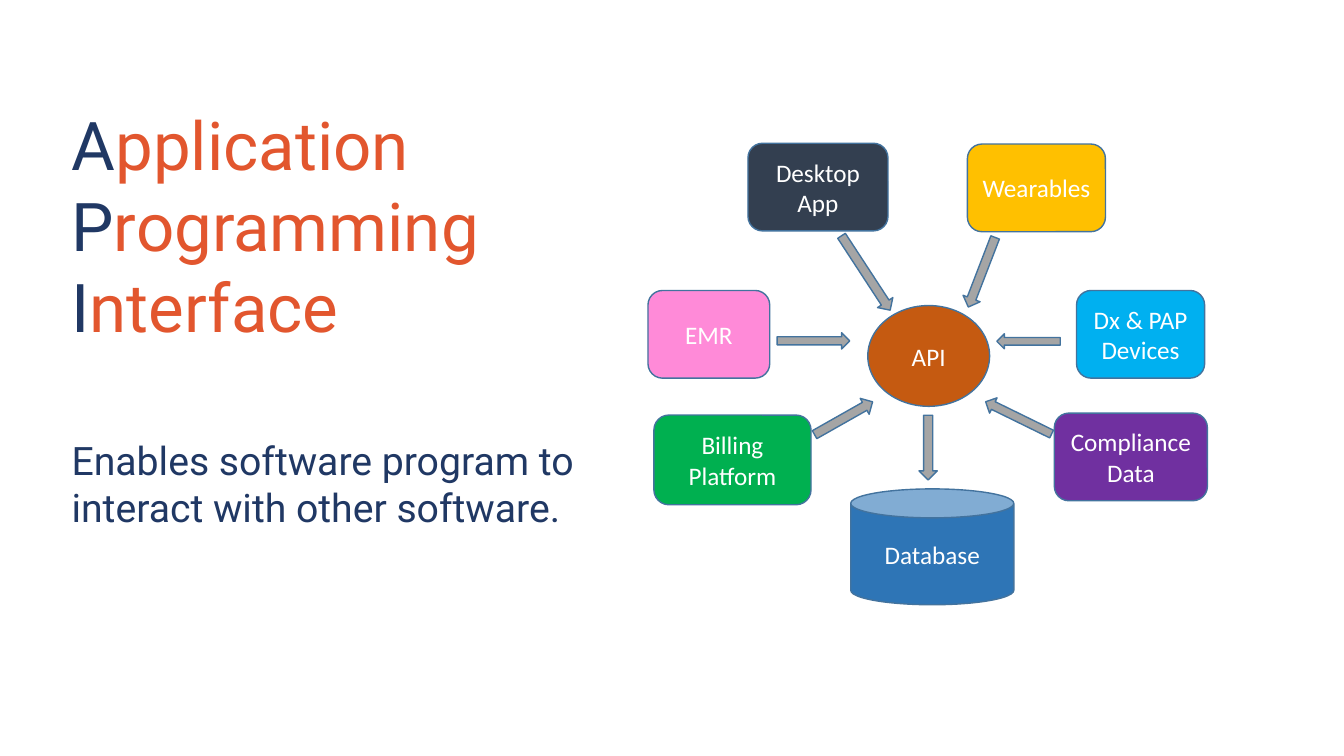
"""Build a slide on what an API is, with a diagram of the systems around it."""
from pptx import Presentation
from pptx.dml.color import RGBColor
from pptx.enum.shapes import MSO_SHAPE
from pptx.enum.text import MSO_ANCHOR, MSO_AUTO_SIZE, PP_ALIGN
from pptx.util import Cm, Pt
from lxml import etree

BOX, OVAL, CAN = MSO_SHAPE.ROUNDED_RECTANGLE, MSO_SHAPE.OVAL, MSO_SHAPE.CAN
ARROW = MSO_SHAPE.RIGHT_ARROW
LEFT, CENTER = PP_ALIGN.LEFT, PP_ALIGN.CENTER
TOP, MIDDLE = MSO_ANCHOR.TOP, MSO_ANCHOR.MIDDLE
NO_FIT = MSO_AUTO_SIZE.NONE
A_NS = "http://schemas.openxmlformats.org/drawingml/2006/main"

COLORS = {
    "navy": "203864", "orange": "E2562E", "white": "FFFFFF",
    "outline": "43739E", "gray": "A5A5A5", "blue": "2E75B6",
    "rust": "C55A11", "green": "00B050", "slate": "333F50",
    "purple": "7030A0", "sky": "00B0F0", "amber": "FFC000", "pink": "FF8AD8",
}


def style_run(r, font, size, color):
    r.font.name = font
    r.font.size = Pt(size)
    r.font.color.rgb = RGBColor.from_string(COLORS[color])


def add_filled(kind, left, top, width, height, color):
    sp = s.shapes.add_shape(kind, Cm(left), Cm(top), Cm(width), Cm(height))
    sp.shadow.inherit = False
    sp.fill.solid()
    sp.fill.fore_color.rgb = RGBColor.from_string(COLORS[color])
    sp.line.color.rgb = RGBColor.from_string(COLORS["outline"])
    sp.line.width = Pt(1)
    return sp


prs = Presentation()
prs.slide_width, prs.slide_height = Cm(33.87), Cm(19.05)
s = prs.slides.add_slide(prs.slide_layouts[1])

title, body = s.shapes.title, s.placeholders[1]
for sp, top, height in ((title, 2.7, 6.4), (body, 10.87, 3)):
    sp.left, sp.top, sp.width, sp.height = Cm(1.55), Cm(top), Cm(14.88), Cm(height)
    tf = sp.text_frame
    tf.word_wrap = True
    tf.auto_size = NO_FIT
    tf.vertical_anchor = TOP

tf = title.text_frame
tf.text = "Application\nProgramming\nInterface"
for p in tf.paragraphs:
    word = p.text
    p.text = word[0]
    p.add_run().text = word[1:]
    p.alignment = LEFT
    p.line_spacing = 0.9
    p.space_after = Pt(6)
    for r, color in zip(p.runs, ("navy", "orange")):
        style_run(r, "Roboto", 48, color)

p = body.text_frame.paragraphs[0]
p.text = "Enables software program to interact with other software."
pPr = p._p.get_or_add_pPr()
pPr.set("marL", "0")
pPr.set("indent", "0")
etree.SubElement(pPr, f"{{{A_NS}}}buNone")
p.alignment = LEFT
p.line_spacing = 1.0
p.space_before = Pt(0)
style_run(p.runs[0], "Roboto", 28, "navy")

nodes = [
    ("Database", CAN, 21.44, 12.32, 4.11, 2.92, "blue"),
    ("API", OVAL, 21.87, 7.7, 3.07, 2.54, "rust"),
    ("Billing Platform", BOX, 16.48, 10.46, 3.96, 2.26, "green"),
    ("Desktop\nApp", BOX, 18.85, 3.61, 3.53, 2.21, "slate"),
    ("Compliance Data", BOX, 26.57, 10.41, 3.86, 2.21, "purple"),
    ("Dx & PAP Devices", BOX, 27.13, 7.32, 3.23, 2.21, "sky"),
    ("Wearables", BOX, 24.38, 3.63, 3.48, 2.21, "amber"),
    ("EMR", BOX, 16.33, 7.32, 3.07, 2.21, "pink"),
]
for label, kind, left, top, width, height, color in nodes:
    sp = add_filled(kind, left, top, width, height, color)
    tf = sp.text_frame
    tf.text = label
    tf.word_wrap = True
    tf.vertical_anchor = MIDDLE
    for p in tf.paragraphs:
        p.alignment = CENTER
        style_run(p.runs[0], "Calibri", 18, "white")

# Centre x, centre y, length, thickness, clockwise angle
arrows = [
    (20.5, 8.59, 1.83, 0.41, 0),
    (25.67, 10.53, 1.85, 0.43, 206.1),
    (21.82, 6.88, 2.24, 0.46, 56.8),
    (23.39, 11.28, 1.63, 0.46, 90),
    (21.26, 10.54, 1.68, 0.46, 330.5),
    (24.74, 6.86, 1.88, 0.46, 111.1),
    (25.92, 8.6, 1.6, 0.38, 180),
]
for x, y, length, thickness, angle in arrows:
    sp = add_filled(ARROW, x - length / 2, y - thickness / 2, length, thickness, "gray")
    sp.rotation = angle

prs.save("out.pptx")
